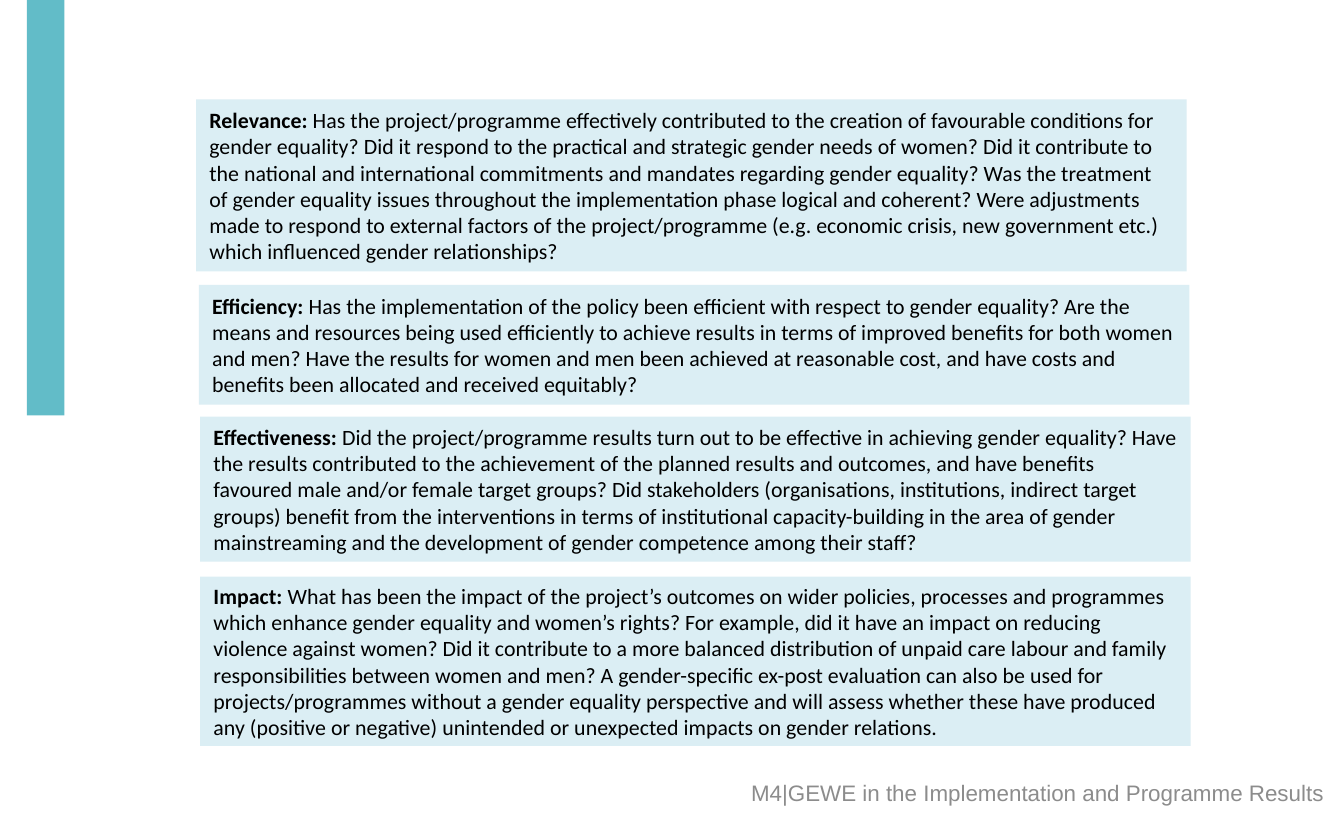
from dataclasses import dataclass

from pptx import Presentation
from pptx.dml.color import RGBColor
from pptx.enum.shapes import MSO_SHAPE
from pptx.enum.text import MSO_ANCHOR, PP_ALIGN
from pptx.shapes.autoshape import Shape
from pptx.slide import Slide
from pptx.util import Inches, Pt


@dataclass(frozen=True)
class Theme:
    accent: str = "62BCC8"
    panel: str = "DBEEF4"
    body_color: str = "000000"
    footer_color: str = "8C8C8C"
    body_font: str = "Calibri"
    footer_font: str = "Arial"
    body_size: float = 11.7
    footer_size: float = 12


@dataclass(frozen=True)
class Criterion:
    heading: str
    questions: str
    left: float
    top: float
    height: float


THEME = Theme()
PANEL_WIDTH = 7.37

CRITERIA = [
    Criterion(
        "Relevance:",
        " Has the project/programme effectively contributed to the creation of "
        "favourable conditions for gender equality? Did it respond to the practical "
        "and strategic gender needs of women? Did it contribute to the national and "
        "international commitments and mandates regarding gender equality? Was the "
        "treatment of gender equality issues throughout the implementation phase "
        "logical and coherent? Were adjustments made to respond to external factors "
        "of the project/programme (e.g. economic crisis, new government etc.) which "
        "influenced gender relationships?",
        1.46, 0.74, 1.28),
    Criterion(
        "Efficiency:",
        " Has the implementation of the policy been efficient with respect to gender "
        "equality? Are the means and resources being used efficiently to achieve "
        "results in terms of improved benefits for both women and men? Have the "
        "results for women and men been achieved at reasonable cost, and have costs "
        "and benefits been allocated and received equitably?",
        1.48, 2.12, 0.89),
    Criterion(
        "Effectiveness:",
        " Did the project/programme results turn out to be effective in achieving "
        "gender equality? Have the results contributed to the achievement of the "
        "planned results and outcomes, and have benefits favoured male and/or female "
        "target groups? Did stakeholders (organisations, institutions, indirect "
        "target groups) benefit from the interventions in terms of institutional "
        "capacity-building in the area of gender mainstreaming and the development "
        "of gender competence among their staff?",
        1.49, 3.1, 1.08),
    Criterion(
        "Impact:",
        " What has been the impact of the project’s outcomes on wider policies, "
        "processes and programmes which enhance gender equality and women’s rights? "
        "For example, did it have an impact on reducing violence against women? Did "
        "it contribute to a more balanced distribution of unpaid care labour and "
        "family responsibilities between women and men? A gender-specific ex-post "
        "evaluation can also be used for projects/programmes without a gender "
        "equality perspective and will assess whether these have produced any "
        "(positive or negative) unintended or unexpected impacts on gender relations.",
        1.49, 4.29, 1.26),
]


def add_text(shape: Shape, text: str, *, font: str = THEME.body_font,
             size: float = THEME.body_size, color: str = THEME.body_color,
             bold: bool = False, align: PP_ALIGN = PP_ALIGN.LEFT) -> None:
    """Append a formatted run to the shape's first paragraph."""
    shape.text_frame.word_wrap = True
    paragraph = shape.text_frame.paragraphs[0]
    paragraph.alignment = align
    run = paragraph.add_run()
    run.text = text
    run.font.name = font
    run.font.size = Pt(size)
    run.font.bold = bold
    run.font.color.rgb = RGBColor.from_string(color)


def add_block(slide: Slide, left: float, top: float, width: float,
              height: float, fill: str) -> Shape:
    block = slide.shapes.add_shape(MSO_SHAPE.RECTANGLE, Inches(left), Inches(top),
                                   Inches(width), Inches(height))
    block.shadow.inherit = False
    block.fill.solid()
    block.fill.fore_color.rgb = RGBColor.from_string(fill)
    block.line.fill.background()
    return block


def add_criterion(slide: Slide, criterion: Criterion) -> None:
    panel = add_block(slide, criterion.left, criterion.top, PANEL_WIDTH,
                      criterion.height, THEME.panel)
    panel.text_frame.vertical_anchor = MSO_ANCHOR.MIDDLE
    add_text(panel, criterion.heading, bold=True)
    add_text(panel, criterion.questions)


def main() -> None:
    deck = Presentation()
    deck.slide_width, deck.slide_height = Inches(10), Inches(6.25)
    slide = deck.slides.add_slide(deck.slide_layouts[6])

    # Accent bar
    add_block(slide, 0.2, 0, 0.28, 3.09, THEME.accent)

    # Evaluation criteria
    for criterion in CRITERIA:
        add_criterion(slide, criterion)

    # Footer
    footer = slide.shapes.add_textbox(Inches(4.16), Inches(5.75),
                                      Inches(5.84), Inches(0.3))
    add_text(footer, "M4|GEWE in the Implementation and Programme Results ",
             font=THEME.footer_font, size=THEME.footer_size,
             color=THEME.footer_color, align=PP_ALIGN.RIGHT)

    deck.save("out.pptx")


if __name__ == "__main__":
    main()
